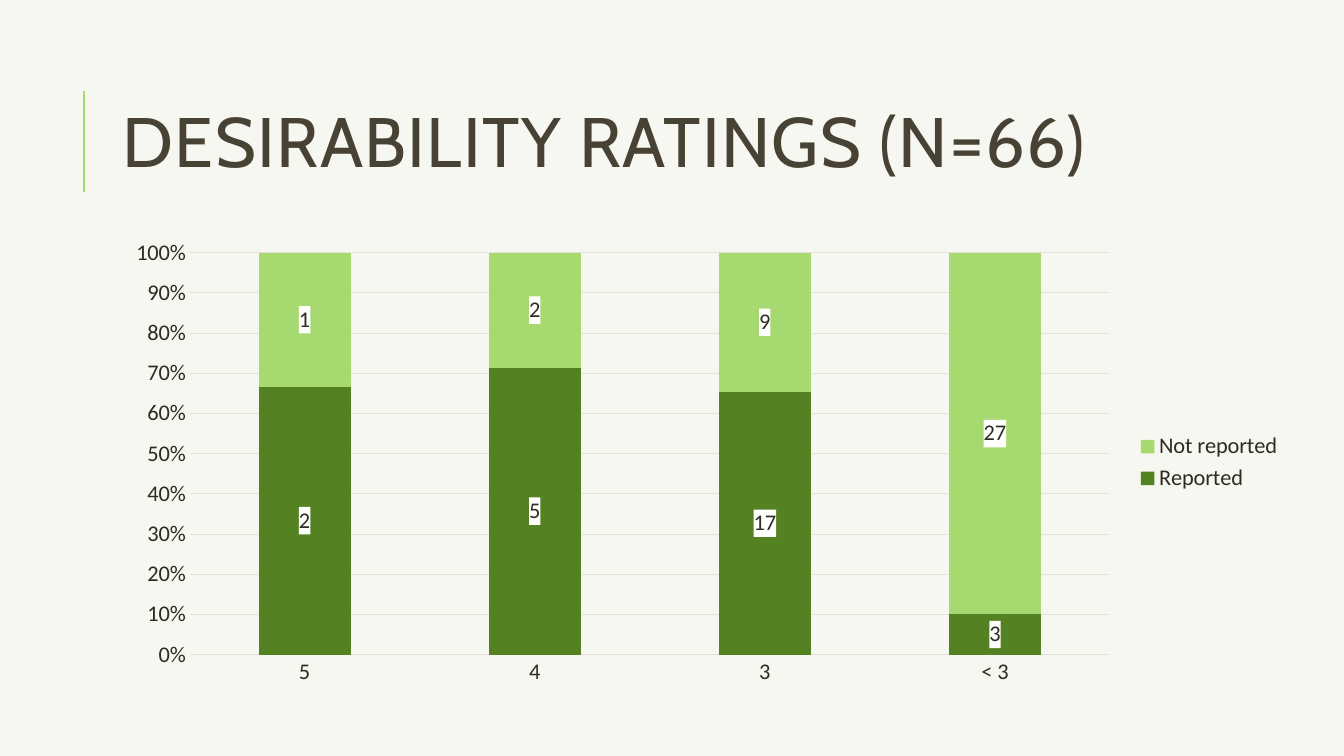
from lxml import etree
from pptx import Presentation
from pptx import util as u
from pptx.chart.data import CategoryChartData
from pptx.dml.color import RGBColor
from pptx.enum import chart as ch, shapes, text
from pptx.oxml import parse_xml
from pptx.oxml.ns import nsdecls, qn

COLOURS = {
    "paper": "F7F7F2",
    "title": "474233",
    "text": "2E2B21",
    "grid": "E4E2D9",
    "light": "A7D971",
    "dark": "548223",
    "label": "FFFFFF",
}


class SlideBuilder:
    """Holds the style and the current slide."""

    heading_font = "Cabin"
    body_font = "Calibri"

    def __init__(self, deck):
        self.page = deck.slides.add_slide(deck.slide_layouts[5])
        self.fill(self.page.background.fill, "paper")

    def colour(self, name):
        return RGBColor.from_string(COLOURS[name])

    def fill(self, fill, name):
        fill.solid()
        fill.fore_color.rgb = self.colour(name)

    def font(self, font, size, colour="text", face=None):
        font.name = face or self.body_font
        font.size = u.Pt(size)
        font.bold = False
        font.color.rgb = self.colour(colour)

    def stroke(self, line, name, width):
        line.color.rgb = self.colour(name)
        line.width = u.Pt(width)

    def rule(self, x, top, bottom):
        line = self.page.shapes.add_connector(
            shapes.MSO_CONNECTOR.STRAIGHT, u.Cm(x), u.Cm(bottom), u.Cm(x), u.Cm(top))
        self.stroke(line.line, "light", 1.5)
        etree.SubElement(line._element.spPr, qn("a:effectLst"))

    def title(self, words, left, top, width, height):
        box = self.page.shapes.title
        box.left, box.top = u.Cm(left), u.Cm(top)
        box.width, box.height = u.Cm(width), u.Cm(height)
        frame = box.text_frame
        frame.word_wrap = True
        frame.auto_size = text.MSO_AUTO_SIZE.NONE
        frame.vertical_anchor = text.MSO_ANCHOR.MIDDLE
        para = frame.paragraphs[0]
        para.alignment = text.PP_ALIGN.LEFT
        para.line_spacing = 0.8
        span = para.add_run()
        span.text = words
        self.font(span.font, 50, "title", self.heading_font)
        span.font._element.set("spc", "100")

    def stacked_chart(self, categories, series, left, top, width, height):
        data = CategoryChartData()
        data.categories = categories
        for name, values, _ in series:
            data.add_series(name, values)
        chart = self.page.shapes.add_chart(
            ch.XL_CHART_TYPE.COLUMN_STACKED_100,
            u.Cm(left), u.Cm(top), u.Cm(width), u.Cm(height), data).chart
        self.font(chart.font, 10)
        chart.has_title = False

        # Legend
        chart.has_legend = True
        chart.legend.position = ch.XL_LEGEND_POSITION.RIGHT
        chart.legend.include_in_layout = False
        self.font(chart.legend.font, 16)

        # Axes and grid
        for axis in (chart.category_axis, chart.value_axis):
            axis.major_tick_mark = axis.minor_tick_mark = ch.XL_TICK_MARK.NONE
            self.font(axis.tick_labels.font, 16)
        self.stroke(chart.category_axis.format.line, "grid", 0.75)
        values_axis = chart.value_axis
        values_axis.format.line.fill.background()
        values_axis.has_major_gridlines = True
        self.stroke(values_axis.major_gridlines.format.line, "grid", 0.75)
        values_axis.tick_labels.number_format = "0%"
        values_axis.tick_labels.number_format_is_linked = False

        # Columns and their labels
        plot = chart.plots[0]
        plot.gap_width, plot.overlap = 150, 100
        plot.vary_by_categories = False
        for column, (_, _, colour) in zip(plot.series, series):
            self.fill(column.format.fill, colour)
            self.column_labels(column.data_labels)

    def column_labels(self, labels):
        labels.show_value = True
        labels.position = ch.XL_LABEL_POSITION.CENTER
        self.font(labels.font, 16)
        labels._element.find(qn("c:txPr")).addprevious(parse_xml(
            f'<c:spPr {nsdecls("c", "a")}><a:solidFill>'
            f'<a:srgbClr val="{COLOURS["label"]}"/></a:solidFill></c:spPr>'))


def main():
    deck = Presentation()
    deck.slide_width, deck.slide_height = u.Cm(33.87), u.Cm(19.05)
    slide = SlideBuilder(deck)

    # Heading
    slide.rule(2.11, 2.29, 4.83)
    slide.title("DESIRABILITY RATINGS (N=66)", 2.84, 1.63, 27, 4.17)

    # Ratings chart
    slide.stacked_chart(
        ["5", "4", "3", "< 3"],
        [("Reported", (2, 5, 17, 3), "dark"),
         ("Not reported", (1, 2, 9, 27), "light")],
        2.84, 5.79, 29.74, 11.73)

    deck.save("out.pptx")


if __name__ == "__main__":
    main()
